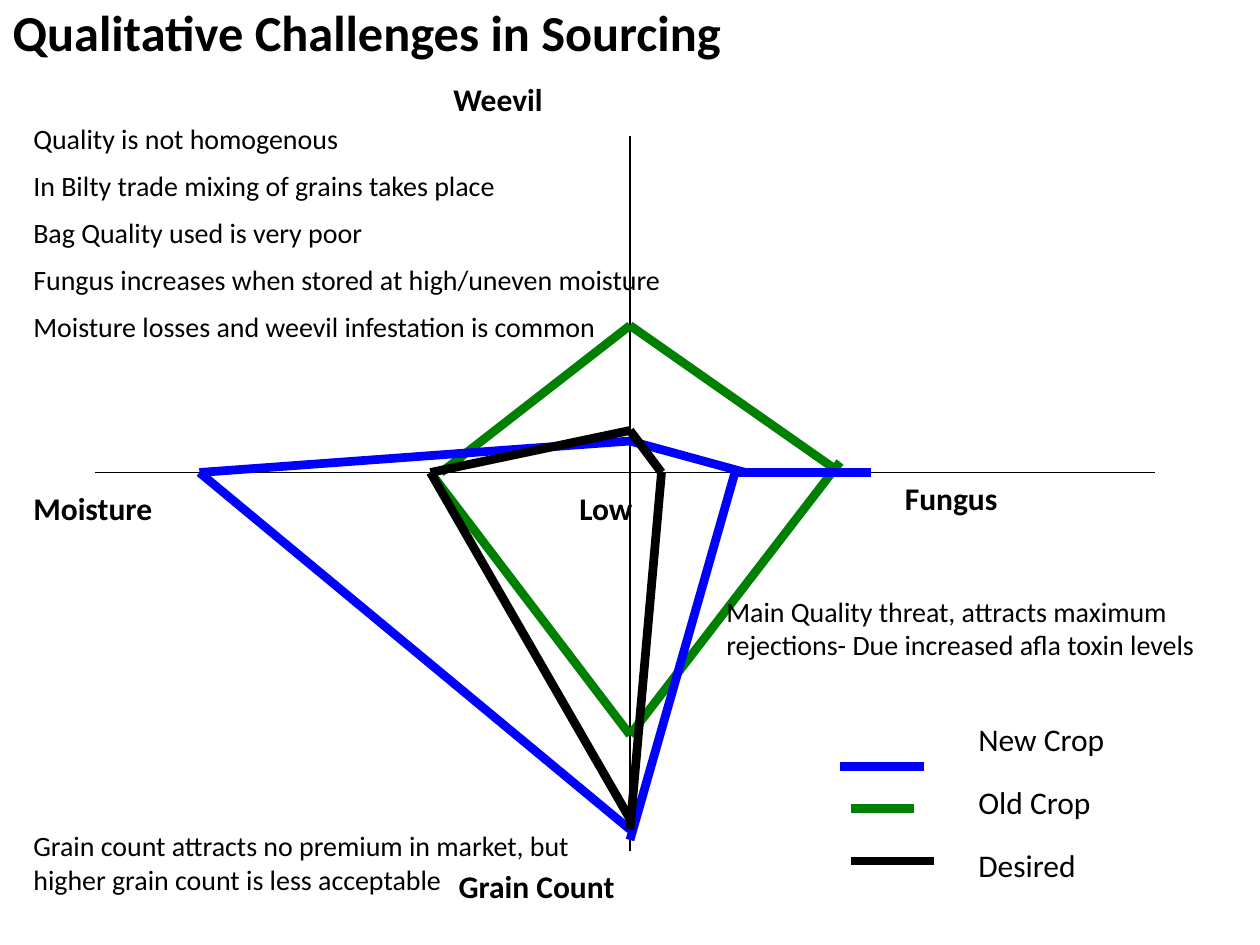
import pptx
import pptx.dml.color
import pptx.enum.shapes
import pptx.enum.text
import pptx.oxml
import pptx.util
from pptx.util import Pt

COLORS = {"text": "000000", "axis": "000000", "new": "0000FF", "old": "008000", "desired": "000000"}
FONT = "Calibri"
TITLE = "Qualitative Challenges in Sourcing"

AXES = [((360, 78), (360, 486)), ((54, 270), (660, 270))]

CROP_LINES = {
    "old": [
        ((246, 270), (360, 420)),
        ((360, 420), (480, 264)),
        ((252, 270), (360, 186)),
        ((480, 270), (360, 186)),
    ],
    "new": [
        ((360, 252), (426, 270)),
        ((114, 270), (360, 252)),
        ((114, 270), (360, 474)),
        ((420, 270), (360, 480)),
        ((420, 270), (498, 270)),
    ],
    "desired": [
        ((246, 270), (360, 468)),
        ((246, 270), (360, 246)),
        ((378, 270), (360, 246)),
        ((378, 270), (360, 474)),
    ],
}

LEGEND = [
    ("New Crop", "new", ((528, 438), (480, 438))),
    ("Old Crop", "old", ((486, 462), (522, 462))),
    ("Desired", "desired", ((534, 492), (486, 492))),
]
LEGEND_LEFT, LEGEND_TOP, LEGEND_STEP, LEGEND_WIDTH = 552, 408, 36, 120

LABELS = [
    ("Weevil", 252, 42, 210),
    ("Fungus", 510, 270, 210),
    ("Grain Count", 255, 492, 210),
    ("Moisture", 12, 276, 138),
    ("Low", 324, 276, 72),
]
LABEL_HEIGHT = 36

NOTES = [
    ([
        "Quality is not homogenous",
        "In Bilty trade mixing of grains takes place",
        "Bag Quality used is very poor",
        "Fungus increases when stored at high/uneven moisture",
        "Moisture losses and weevil infestation is common",
    ], (12, 66, 396, 143)),
    (["Grain count attracts no premium in market, but higher grain count is less acceptable"],
     (12, 470, 348, 46)),
    (["Main Quality threat, attracts maximum rejections- Due increased afla toxin levels"],
     (408, 336, 330, 46)),
]
NOTE_GAP = 7.6


def rgb(name):
    return pptx.dml.color.RGBColor.from_string(COLORS[name])


def set_values(target, values):
    for name, value in values.items():
        setattr(target, name, value)


def format_font(paragraph, size, bold):
    set_values(paragraph.font, {"name": FONT, "size": Pt(size), "bold": bold})
    paragraph.font.color.rgb = rgb("text")


def place(shape, bounds):
    set_values(shape, dict(zip(("left", "top", "width", "height"), map(Pt, bounds))))


def add_line(slide, ends, color, width):
    (x1, y1), (x2, y2) = ends
    line = slide.shapes.add_connector(
        pptx.enum.shapes.MSO_CONNECTOR.STRAIGHT, Pt(x1), Pt(y1), Pt(x2), Pt(y2))
    line.line.color.rgb = rgb(color)
    line.line.width = Pt(width)
    line._element.spPr.append(pptx.oxml.parse_xml(
        '<a:effectLst xmlns:a="http://schemas.openxmlformats.org/drawingml/2006/main"/>'))


def add_text(slide, lines, bounds, size, bold=False):
    frame = slide.shapes.add_textbox(*map(Pt, bounds)).text_frame
    set_values(frame, {
        "word_wrap": True,
        "auto_size": pptx.enum.text.MSO_AUTO_SIZE.SHAPE_TO_FIT_TEXT,
        "text": "\n".join(lines),
    })
    for index, paragraph in enumerate(frame.paragraphs):
        format_font(paragraph, size, bold)
        if index:
            paragraph.space_before = Pt(NOTE_GAP)


def main():
    presentation = pptx.Presentation()
    set_values(presentation, {"slide_width": Pt(720), "slide_height": Pt(540)})
    slide = presentation.slides.add_slide(presentation.slide_layouts[5])

    title = slide.shapes.title
    place(title, (0, 0, 720, 36))
    set_values(title.text_frame, {
        "text": TITLE,
        "word_wrap": True,
        "auto_size": pptx.enum.text.MSO_AUTO_SIZE.NONE,
        "vertical_anchor": pptx.enum.text.MSO_ANCHOR.MIDDLE,
    })
    heading = title.text_frame.paragraphs[0]
    heading.alignment = pptx.enum.text.PP_ALIGN.LEFT
    format_font(heading, 28.8, True)

    for ends in AXES:
        add_line(slide, ends, "axis", 0.75)
    for crop, lines in CROP_LINES.items():
        for ends in lines:
            add_line(slide, ends, crop, 5)
    for row, (name, crop, ends) in enumerate(LEGEND):
        add_line(slide, ends, crop, 5)
        top = LEGEND_TOP + row * LEGEND_STEP
        add_text(slide, [name], (LEGEND_LEFT, top, LEGEND_WIDTH, LABEL_HEIGHT), 18)
    for name, left, top, width in LABELS:
        add_text(slide, [name], (left, top, width, LABEL_HEIGHT), 18, True)
    for lines, bounds in NOTES:
        add_text(slide, lines, bounds, 16)

    presentation.save("out.pptx")


if __name__ == "__main__":
    main()
